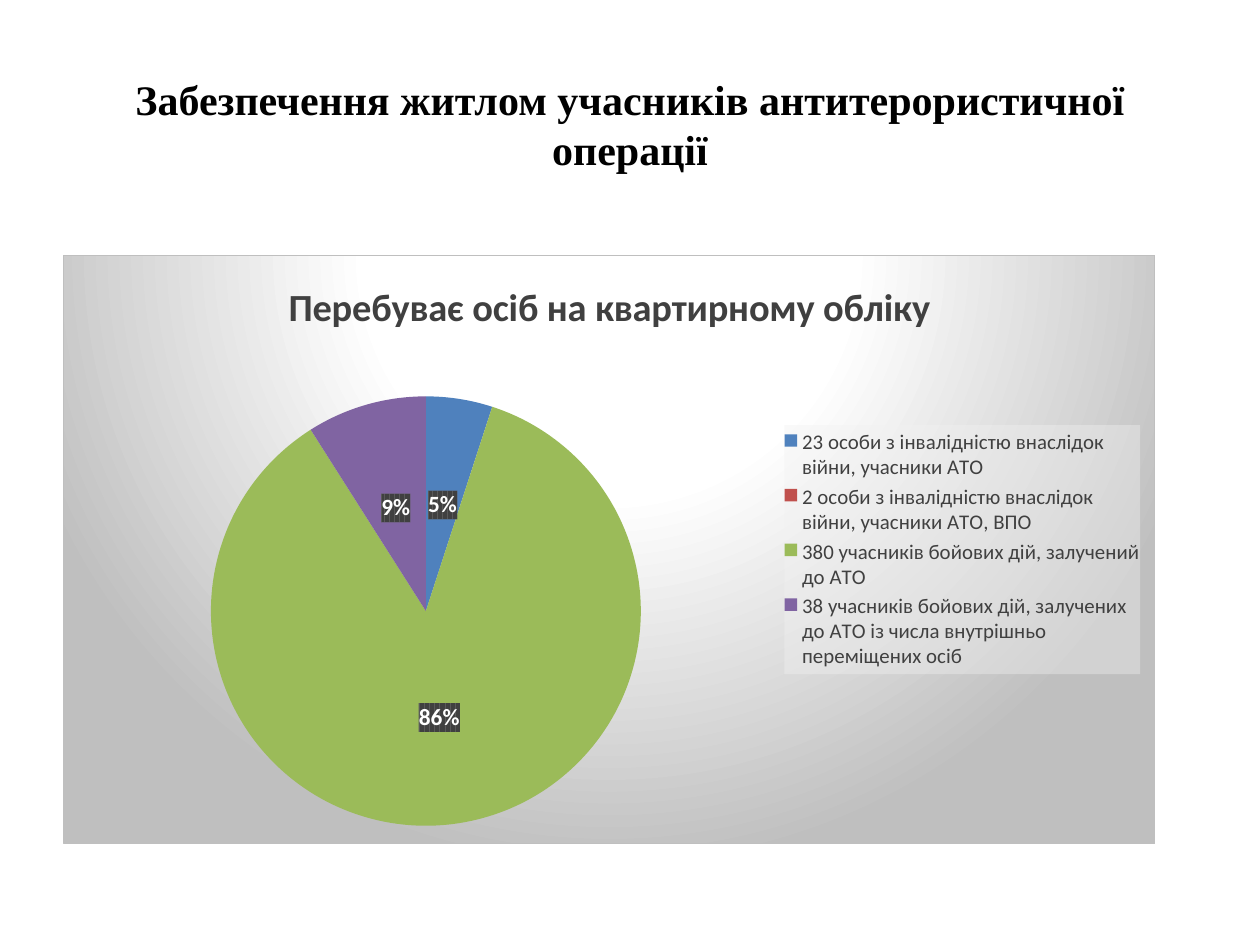
from typing import Any, NamedTuple

from lxml.etree import fromstring
from pptx import Presentation
from pptx.chart.data import CategoryChartData
from pptx.dml.color import RGBColor
from pptx.enum.chart import XL_CHART_TYPE, XL_LABEL_POSITION, XL_LEGEND_POSITION
from pptx.enum.text import MSO_ANCHOR, MSO_AUTO_SIZE, PP_ALIGN
from pptx.oxml.ns import nsdecls
from pptx.util import Inches, Pt


class Slice(NamedTuple):
    label: str
    percent: int
    color: str


class Area(NamedTuple):
    """Place inside the chart, as fractions of its size."""
    x: float
    y: float
    w: float
    h: float


SLICES = [
    Slice("23 особи з інвалідністю внаслідок війни, учасники АТО", 5, "4F81BD"),
    Slice("2 особи з інвалідністю внаслідок війни, учасники АТО, ВПО", 0, "C0504D"),
    Slice("380 учасників бойових дій, залучений до АТО", 86, "9BBB59"),
    Slice("38 учасників бойових дій, залучених до АТО із числа "
          "внутрішньо переміщених осіб", 9, "8064A2"),
]
SLIDE_TITLE = "Забезпечення житлом учасників антитерористичної операції"
CHART_TITLE = "Перебуває осіб на квартирному обліку"
PIE_AREA = Area(0.135, 0.24, 0.394, 0.73)
LEGEND_AREA = Area(0.665, 0.289, 0.326, 0.423)

CHART_FORMAT = """
<a:gradFill><a:gsLst>
  <a:gs pos="0"><a:srgbClr val="FFFFFF"/></a:gs>
  <a:gs pos="39000"><a:srgbClr val="FFFFFF"/></a:gs>
  <a:gs pos="100000"><a:srgbClr val="BFBFBF"/></a:gs>
</a:gsLst><a:path path="circle">
  <a:fillToRect l="50000" t="-80000" r="50000" b="180000"/>
</a:path></a:gradFill>
<a:ln w="9525"><a:solidFill><a:srgbClr val="BFBFBF"/></a:solidFill></a:ln>"""
LEGEND_FORMAT = """
<a:solidFill><a:srgbClr val="F2F2F2"><a:alpha val="39000"/></a:srgbClr></a:solidFill>
<a:ln><a:noFill/></a:ln>"""
LABEL_FORMAT = """
<a:pattFill prst="dkVert"><a:fgClr><a:srgbClr val="404040"/></a:fgClr>
<a:bgClr><a:srgbClr val="595959"/></a:bgClr></a:pattFill>
<a:ln><a:noFill/></a:ln>"""


def rgb(color: str) -> RGBColor:
    return RGBColor.from_string(color)


def format_font(font: Any, color: str, **values: Any) -> None:
    for name, value in values.items():
        setattr(font, name, value)
    font.color.rgb = rgb(color)


def add_format(text_properties: Any, content: str) -> None:
    """Put shape properties in their place before the text properties."""
    text_properties.addprevious(
        fromstring(f"<c:spPr {nsdecls('c', 'a')}>{content}</c:spPr>"))


def make_layout(area: Area, inner: bool = False) -> Any:
    target = '<c:layoutTarget val="inner"/>' if inner else ""
    modes = "".join(f'<c:{axis}Mode val="edge"/>' for axis in "xy")
    sizes = "".join(f'<c:{name} val="{value}"/>'
                    for name, value in area._asdict().items())
    return fromstring(f"<c:layout {nsdecls('c')}><c:manualLayout>"
                      f"{target}{modes}{sizes}</c:manualLayout></c:layout>")


def add_title(slide: Any) -> None:
    title = slide.shapes.title
    title.left, title.top = Inches(0.5), Inches(0.58)
    title.width, title.height = Inches(9), Inches(1.44)
    frame = title.text_frame
    frame.text = SLIDE_TITLE
    frame_format = {"word_wrap": True, "auto_size": MSO_AUTO_SIZE.NONE,
                    "vertical_anchor": MSO_ANCHOR.TOP, "margin_top": 0}
    for name, value in frame_format.items():
        setattr(frame, name, value)
    paragraph = frame.paragraphs[0]
    paragraph.alignment = PP_ALIGN.CENTER
    format_font(paragraph.runs[0].font, "000000", name="Times New Roman",
                size=Pt(24), bold=True)


def add_pie(slide: Any) -> None:
    data = CategoryChartData()
    data.categories = [part.label for part in SLICES]
    data.add_series(CHART_TITLE, [part.percent for part in SLICES])
    chart = slide.shapes.add_chart(
        XL_CHART_TYPE.PIE, Inches(0.5), Inches(2.02), Inches(8.67),
        Inches(4.68), data).chart
    format_font(chart.font, "000000", name="Calibri", size=Pt(10))

    # Chart title
    chart.has_title = True
    chart.chart_title.include_in_layout = False
    title_frame = chart.chart_title.text_frame
    title_frame.text = CHART_TITLE
    format_font(title_frame.paragraphs[0].runs[0].font, "404040",
                name="Calibri", size=Pt(22), bold=True)

    # Slices and percent labels
    plot = chart.plots[0]
    plot.vary_by_categories = True
    series = plot.series[0]
    for index, part in enumerate(SLICES):
        fill = series.points[index].format.fill
        fill.solid()
        fill.fore_color.rgb = rgb(part.color)
    labels = series.data_labels
    label_format = {"show_percentage": True, "show_value": False,
                    "number_format": "0%", "number_format_is_linked": False,
                    "position": XL_LABEL_POSITION.CENTER}
    for name, value in label_format.items():
        setattr(labels, name, value)
    format_font(labels.font, "FFFFFF", name="Calibri", size=Pt(13.3), bold=True)

    # Legend
    chart.has_legend = True
    chart.legend.position = XL_LEGEND_POSITION.RIGHT
    chart.legend.include_in_layout = False
    format_font(chart.legend.font, "404040", name="Calibri", size=Pt(11.9))

    # Backgrounds and fixed places
    root = chart.element
    for query, content in (("c:txPr", CHART_FORMAT),
                           (".//c:legend/c:txPr", LEGEND_FORMAT),
                           (".//c:ser/c:dLbls/c:txPr", LABEL_FORMAT)):
        add_format(root.xpath(query)[0], content)
    for layout in root.xpath(".//c:plotArea/c:layout | .//c:legend/c:layout"):
        layout.getparent().remove(layout)
    root.xpath(".//c:plotArea")[0].insert(0, make_layout(PIE_AREA, inner=True))
    root.xpath(".//c:legend/c:overlay")[0].addprevious(make_layout(LEGEND_AREA))


def main() -> None:
    presentation = Presentation()
    presentation.slide_width, presentation.slide_height = Inches(10), Inches(7.5)
    slide = presentation.slides.add_slide(presentation.slide_layouts[5])
    add_title(slide)
    add_pie(slide)
    presentation.save("out.pptx")


if __name__ == "__main__":
    main()
